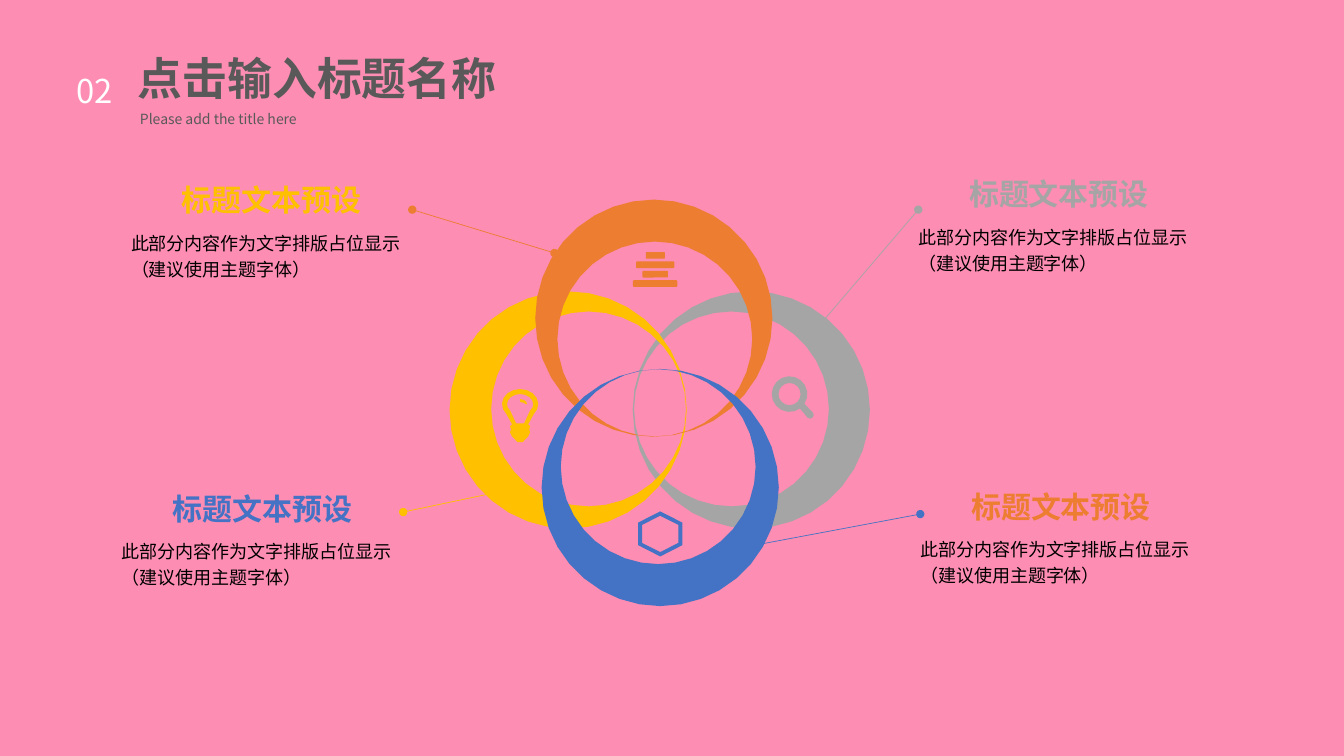
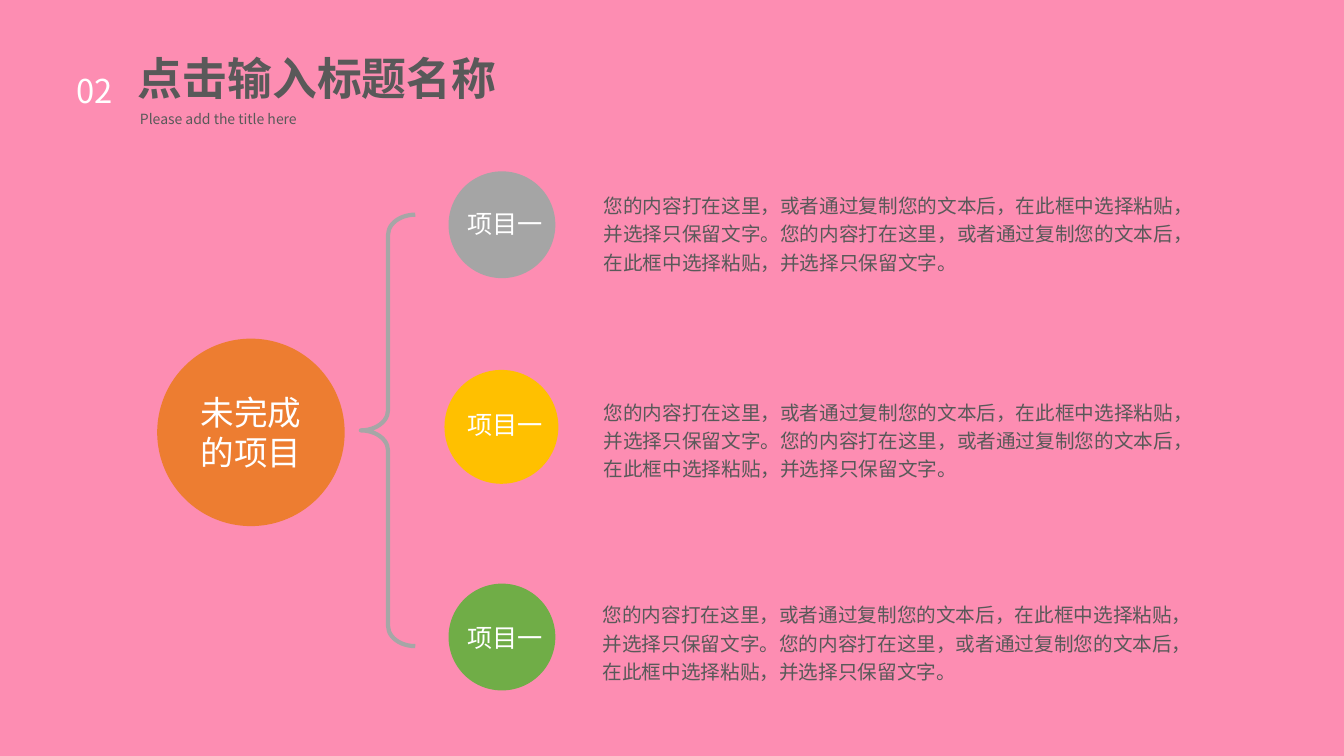
"""Build two pink slides: a four-ring diagram and a bracketed project list."""
import math
from typing import NamedTuple

import lxml.etree
import pptx
import pptx.dml.color
import pptx.enum.shapes
import pptx.enum.text
import pptx.oxml.ns
import pptx.util

EMU_PER_PX = 3048
FONT = "Noto Sans CJK SC"
PINK, WHITE, BLACK, DARK = "FD8DB2", "FFFFFF", "000000", "595959"
ORANGE, YELLOW, GRAY, BLUE, GREEN = "ED7D31", "FFC000", "A5A5A5", "4472C4", "70AD47"
BRACE_GRAY = "A6A6A6"
RING_OUTER, RING_INNER, RING_STEPS = 353, 290, 36

SHAPE = pptx.enum.shapes.MSO_SHAPE
ALIGN = pptx.enum.text.PP_ALIGN
ANCHOR = pptx.enum.text.MSO_ANCHOR
AUTO_SIZE = pptx.enum.text.MSO_AUTO_SIZE

Point = tuple[float, float]
Contour = list[Point]


class Box(NamedTuple):
    left: int
    top: int
    width: int
    height: int


class TextStyle(NamedTuple):
    size: float
    color: str
    bold: bool = False
    align: ALIGN = ALIGN.LEFT
    spacing: float | None = None


class Ring(NamedTuple):
    center: Point
    hole: Point
    color: str


class Leader(NamedTuple):
    start: Point
    end: Point
    color: str


class Callout(NamedTuple):
    left: int
    top: int
    color: str


class Project(NamedTuple):
    circle: Box
    color: str
    label_top: int
    body_left: int
    body_top: int


RINGS = [
    Ring((2236, 1220), (2177, 1217), GRAY),
    Ring((1691, 1220), (1752, 1217), YELLOW),
    Ring((1946, 947), (1949, 1009), ORANGE),
    Ring((1965, 1451), (1959, 1389), BLUE),
]
LEADERS = [
    Leader((1650, 753), (1227, 624), ORANGE),
    Leader((1542, 1452), (1200, 1524), YELLOW),
    Leader((2733, 624), (2433, 975), GRAY),
    Leader((2739, 1530), (2229, 1626), BLUE),
]
CALLOUTS = [
    Callout(390, 522, YELLOW),
    Callout(363, 1441, BLUE),
    Callout(2733, 504, GRAY),
    Callout(2739, 1434, ORANGE),
]
CALLOUT_TITLE = "标题文本预设"
CALLOUT_BODY = "此部分内容作为文字排版占位显示 \v（建议使用主题字体）"
PROJECTS = [
    Project(Box(1335, 510, 318, 318), GRAY, 606, 1767, 549),
    Project(Box(1323, 1101, 339, 339), YELLOW, 1203, 1767, 1164),
    Project(Box(1335, 1737, 318, 318), GREEN, 1836, 1764, 1767),
]
PROJECT_BODY = "您的内容打在这里，或者通过复制您的文本后，在此框中选择粘贴，并选择只保留文字。" * 2


def px(value: float) -> int:
    return round(value * EMU_PER_PX)


def rgb(color: str) -> pptx.dml.color.RGBColor:
    return pptx.dml.color.RGBColor.from_string(color)


def paint(sp, color: str):
    sp.shadow.inherit = False
    sp.fill.solid()
    sp.fill.fore_color.rgb = rgb(color)
    sp.line.fill.background()
    return sp


def write(tf, text: str, style: TextStyle) -> None:
    tf.text = text
    for p in tf.paragraphs:
        p.alignment = style.align
        if style.spacing:
            p.line_spacing = style.spacing
        for r in p.runs:
            r.font.size = pptx.util.Pt(style.size)
            r.font.bold = style.bold
            r.font.color.rgb = rgb(style.color)
            r.font.name = FONT
            ea = lxml.etree.SubElement(r._r.get_or_add_rPr(), pptx.oxml.ns.qn("a:ea"))
            ea.set("typeface", FONT)


def add_text(s, box: Box, text: str, style: TextStyle, wrap: bool = True,
             grow: bool = True, inset_top: int | None = None,
             anchor: ANCHOR = ANCHOR.TOP) -> None:
    tf = s.shapes.add_textbox(*map(px, box)).text_frame
    tf.word_wrap = wrap
    tf.vertical_anchor = anchor
    tf.auto_size = AUTO_SIZE.SHAPE_TO_FIT_TEXT if grow else AUTO_SIZE.NONE
    if inset_top is not None:
        tf.margin_left = tf.margin_right = tf.margin_bottom = 0
        tf.margin_top = px(inset_top)
    write(tf, text, style)


def add_preset(s, kind: SHAPE, box: Box, color: str):
    return paint(s.shapes.add_shape(kind, *map(px, box)), color)


def arc(center: Point, rx: float, ry: float, start: float = 0, end: float = 360,
        steps: int = 12) -> Contour:
    angles = [math.radians(start + (end - start) * i / steps) for i in range(steps + 1)]
    return [(center[0] + rx * math.cos(a), center[1] + ry * math.sin(a)) for a in angles]


def add_outline(s, contours: list[Contour], color: str) -> None:
    scaled = [[(px(x), px(y)) for x, y in contour] for contour in contours]
    builder = s.shapes.build_freeform(*scaled[0][0])
    for i, contour in enumerate(scaled):
        if i:
            builder.move_to(*contour[0])
        builder.add_line_segments(contour[1:], close=True)
    paint(builder.convert_to_shape(), color)


def add_ring(s, ring: Ring) -> None:
    outer = arc(ring.center, RING_OUTER, RING_OUTER, steps=RING_STEPS)
    hole = arc(ring.hole, RING_INNER, RING_INNER, 360, 0, RING_STEPS)
    add_outline(s, [outer[:-1], hole[:-1]], ring.color)


def add_search_icon(s) -> None:
    lens = (2350, 1173)
    outline = arc(lens, 53, 53, 54, 393, 16) + arc((2411, 1235), 11, 11, -45, 135, 4)
    add_outline(s, [outline, arc(lens, 33, 33, 360, 0, 16)], GRAY)


def add_bulb_icon(s) -> None:
    center = (1548, 1203)
    base = [(24, 60), (30, 66), (27, 75), (30, 84), (24, 96), (15, 105), (8, 113)]
    right = [(center[0] + x, center[1] + y) for x, y in base]
    left = [(center[0] - x, center[1] + y) for x, y in reversed(base)]
    outline = arc(center, 54, 45, 139, 401) + right + left
    glass = arc(center, 39, 30, 139, 401) + [(1560, 1260), (1536, 1260)]
    glint = arc(center, 21, 15, -90, 0, 3) + arc(center, 15, 6, 0, -90, 3)
    add_outline(s, [outline, glass[::-1], glint], YELLOW)


def add_bars_icon(s) -> None:
    for i, width in enumerate([57, 114, 76, 132]):
        add_preset(s, SHAPE.ROUNDED_RECTANGLE,
                   Box(1950 - width // 2, 750 + 28 * i, width, 20), ORANGE)


def add_hexagon_icon(s) -> None:
    center = (1965, 1589)
    add_outline(s, [arc(center, 76, 67, 90, 450, 6), arc(center, 62, 54, 450, 90, 6)], BLUE)


def add_leader(s, leader: Leader) -> None:
    line = s.shapes.add_connector(pptx.enum.shapes.MSO_CONNECTOR.STRAIGHT,
                                  *map(px, leader.start + leader.end))
    line.line.color.rgb = rgb(leader.color)
    line.line.width = pptx.util.Pt(0.5)
    ln = line.line._get_or_add_ln()
    for tag in ("a:headEnd", "a:tailEnd"):
        lxml.etree.SubElement(ln, pptx.oxml.ns.qn(tag)).set("type", "oval")
    lxml.etree.SubElement(line._element.spPr, pptx.oxml.ns.qn("a:effectLst"))


def add_callout(s, callout: Callout) -> None:
    add_text(s, Box(callout.left, callout.top, 837, 126), CALLOUT_TITLE,
             TextStyle(21.4, callout.color, True, ALIGN.CENTER),
             wrap=False, grow=False, inset_top=0, anchor=ANCHOR.BOTTOM)
    add_text(s, Box(callout.left, callout.top + 126, 837, 228), CALLOUT_BODY,
             TextStyle(12.9, BLACK, spacing=1.2), grow=False, inset_top=30)


def add_project(s, project: Project) -> None:
    add_preset(s, SHAPE.OVAL, project.circle, project.color)
    add_text(s, Box(1278, project.label_top, 450, 120), "项目一",
             TextStyle(18, WHITE, align=ALIGN.CENTER))
    add_text(s, Box(project.body_left, project.body_top, 1770, 405), PROJECT_BODY,
             TextStyle(14, DARK, spacing=1.2))


def add_header(s) -> None:
    add_text(s, Box(198, 195, 177, 147), "02", TextStyle(23.4, WHITE), wrap=False)
    add_text(s, Box(387, 315, 546, 81), "Please add the title here",
             TextStyle(10, DARK), wrap=False)
    add_text(s, Box(381, 135, 1221, 192), "点击输入标题名称", TextStyle(32, DARK, True))


def new_slide(prs):
    s = prs.slides.add_slide(prs.slide_layouts[6])
    add_header(s)
    return s


def build_rings_slide(prs) -> None:
    s = new_slide(prs)
    for ring in RINGS:
        add_ring(s, ring)
    for add_icon in (add_search_icon, add_bulb_icon, add_bars_icon, add_hexagon_icon):
        add_icon(s)
    for leader in LEADERS:
        add_leader(s, leader)
    for callout in CALLOUTS:
        add_callout(s, callout)


def build_projects_slide(prs) -> None:
    s = new_slide(prs)
    hub = add_preset(s, SHAPE.OVAL, Box(468, 1008, 558, 558), ORANGE)
    hub.text_frame.vertical_anchor = ANCHOR.MIDDLE
    write(hub.text_frame, "未完成的项目", TextStyle(24, WHITE, align=ALIGN.CENTER))
    brace = add_preset(s, SHAPE.LEFT_BRACE, Box(1074, 639, 162, 1284), BRACE_GRAY)
    brace.fill.background()
    brace.line.color.rgb = rgb(BRACE_GRAY)
    brace.line.width = pptx.util.Pt(3)
    brace.adjustments[0] = 0.37
    for project in PROJECTS:
        add_project(s, project)


def main() -> None:
    prs = pptx.Presentation()
    prs.slide_width, prs.slide_height = px(4000), px(2250)
    background = prs.slide_master.background.fill
    background.solid()
    background.fore_color.rgb = rgb(PINK)
    build_rings_slide(prs)
    build_projects_slide(prs)
    prs.save("out.pptx")


if __name__ == "__main__":
    main()
